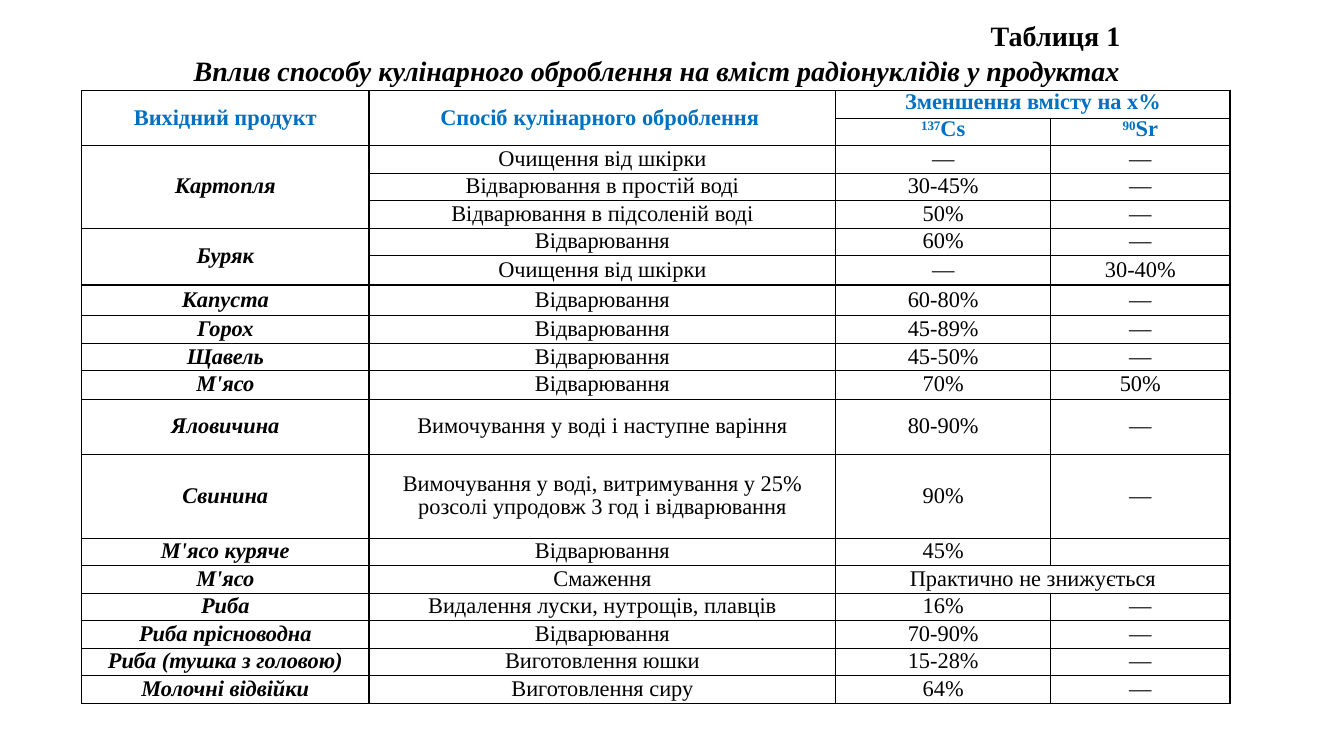
"""Build a slide with a table of radionuclide loss by cooking method."""
from dataclasses import dataclass

from lxml.etree import SubElement
from pptx import Presentation
from pptx.dml.color import RGBColor
from pptx.enum.text import MSO_ANCHOR as Anchor, PP_ALIGN as Align
from pptx.oxml import parse_xml
from pptx.oxml.ns import nsdecls, qn
from pptx.util import Inches, Pt

BLACK = RGBColor(0x00, 0x00, 0x00)
BLUE = RGBColor(0x00, 0x70, 0xC0)
FONT = "Times New Roman"
CELL_SIZE = 16
TABLE_HEIGHT = 6.08
HEADER_ROWS = 2
COLUMN_WIDTHS = (2.85, 4.63, 2.13, 1.78)
DASH = "—"
BOILING = "Відварювання"
PEELING = "Очищення від шкірки"


@dataclass(frozen=True)
class Treatment:
    """One cooking method with its reductions and any special row height."""
    method: str
    caesium: str
    strontium: str | None = DASH
    height: float | None = None


@dataclass(frozen=True)
class Product:
    """A product with the treatments applied to it."""
    name: str
    treatments: tuple[Treatment, ...]


PRODUCTS = (
    Product("Картопля", (
        Treatment(PEELING, DASH),
        Treatment("Відварювання в простій воді", "30-45%"),
        Treatment("Відварювання в підсоленій воді", "50%"),
    )),
    Product("Буряк", (
        Treatment(BOILING, "60%"),
        Treatment(PEELING, DASH, "30-40%", height=0.29),
    )),
    Product("Капуста", (Treatment(BOILING, "60-80%", height=0.3),)),
    Product("Горох", (Treatment(BOILING, "45-89%", height=0.28),)),
    Product("Щавель", (Treatment(BOILING, "45-50%"),)),
    Product("М'ясо", (Treatment(BOILING, "70%", "50%", height=0.28),)),
    Product("Яловичина", (
        Treatment("Вимочування у воді і наступне варіння", "80-90%", height=0.55),
    )),
    Product("Свинина", (
        Treatment("Вимочування у воді, витримування у 25% розсолі упродовж 3 год "
                  "і відварювання", "90%", height=0.83),
    )),
    Product("М'ясо куряче", (Treatment(BOILING, "45%", ""),)),
    Product("М'ясо", (Treatment("Смаження", "Практично не знижується", None),)),
    Product("Риба", (Treatment("Видалення луски, нутрощів, плавців", "16%"),)),
    Product("Риба прісноводна", (Treatment(BOILING, "70-90%"),)),
    Product("Риба (тушка з головою)", (Treatment("Виготовлення юшки", "15-28%"),)),
    Product("Молочні відвійки", (Treatment("Виготовлення сиру", "64%"),)),
)


def write(paragraph, text: str, *, size: int = CELL_SIZE, color: RGBColor = BLACK,
          bold: bool = False, italic: bool = False, raised: bool = False,
          align: Align = Align.CENTER, spacing: float = 0.93) -> None:
    """Add formatted text to a paragraph."""
    paragraph.alignment = align
    paragraph.line_spacing = spacing
    if not text:
        SubElement(paragraph._p, qn("a:endParaRPr"), sz=str(size * 100))
        return
    run = paragraph.add_run()
    run.text = text
    font = run.font
    font.name, font.size, font.bold, font.italic = FONT, Pt(size), bold, italic
    font.color.rgb = color
    if raised:
        run._r.get_or_add_rPr().set("baseline", "30000")


def style_cell(cell) -> None:
    """Clear the fill, set the margins and outline a cell."""
    cell.fill.background()
    cell.margin_left = cell.margin_right = Inches(0.03)
    cell.margin_top = cell.margin_bottom = 0
    cell.vertical_anchor = Anchor.MIDDLE
    properties = cell._tc.get_or_add_tcPr()
    for position, side in enumerate("LRTB"):
        properties.insert(position, parse_xml(
            f'<a:ln{side} {nsdecls("a")} w="{Pt(1)}"><a:solidFill>'
            f'<a:srgbClr val="{BLACK}"/></a:solidFill></a:ln{side}>'))


def add_title(slide) -> None:
    """Add the table number and its caption."""
    title = slide.shapes.add_textbox(Inches(1.8), Inches(0.12), Inches(9.41), Inches(0.77))
    frame = title.text_frame
    frame.word_wrap = True
    caption = "Вплив способу кулінарного оброблення на вміст радіонуклідів у продуктах"
    look = dict(size=20, bold=True, align=Align.RIGHT, spacing=1.05)
    write(frame.paragraphs[0], "Таблиця 1", **look)
    write(frame.add_paragraph(), caption, italic=True, **look)


def fill_header(table) -> None:
    """Write the two-level heading."""
    heading = dict(color=BLUE, bold=True)
    for column, text in enumerate(("Вихідний продукт", "Спосіб кулінарного оброблення ")):
        table.cell(0, column).merge(table.cell(1, column))
        write(table.cell(0, column).text_frame.paragraphs[0], text, **heading)
    reduction = table.cell(0, 2)
    reduction.merge(table.cell(0, 3))
    reduction.vertical_anchor = Anchor.TOP
    write(reduction.text_frame.paragraphs[0], "Зменшення вмісту на х%", **heading)
    for column, (mass, element) in enumerate((("137", "Сs"), ("90", "Sr")), start=2):
        isotope = table.cell(1, column)
        isotope.vertical_anchor = Anchor.TOP
        paragraph = isotope.text_frame.paragraphs[0]
        write(paragraph, mass, raised=True, **heading)
        write(paragraph, element, **heading)


def fill_products(table) -> None:
    """Write each product beside its treatments."""
    row = HEADER_ROWS
    for product in PRODUCTS:
        name = table.cell(row, 0)
        if len(product.treatments) > 1:
            name.merge(table.cell(row + len(product.treatments) - 1, 0))
        write(name.text_frame.paragraphs[0], product.name, bold=True, italic=True)
        for treatment in product.treatments:
            values = (treatment.method, treatment.caesium, treatment.strontium)
            for column, value in enumerate(values, start=1):
                if value is None:
                    table.cell(row, column - 1).merge(table.cell(row, column))
                else:
                    write(table.cell(row, column).text_frame.paragraphs[0], value)
            row += 1


def add_reduction_table(slide) -> None:
    """Add the table and share the spare height among the regular rows."""
    heights = [None] * HEADER_ROWS + [
        treatment.height for product in PRODUCTS for treatment in product.treatments]
    special = sum(height for height in heights if height)
    regular = (TABLE_HEIGHT - special) / heights.count(None)
    table = slide.shapes.add_table(
        len(heights), len(COLUMN_WIDTHS), Inches(0.81), Inches(0.9),
        Inches(sum(COLUMN_WIDTHS)), Inches(TABLE_HEIGHT)).table
    table.first_row = table.horz_banding = False
    for column, width in zip(table.columns, COLUMN_WIDTHS):
        column.width = Inches(width)
    for row, height in zip(table.rows, heights):
        row.height = Inches(height or regular)
    for cell in table.iter_cells():
        style_cell(cell)
    fill_header(table)
    fill_products(table)


def main() -> None:
    """Create and save the presentation."""
    presentation = Presentation()
    presentation.slide_width, presentation.slide_height = Inches(13.33), Inches(7.5)
    slide = presentation.slides.add_slide(presentation.slide_layouts[6])
    add_title(slide)
    add_reduction_table(slide)
    presentation.save("out.pptx")


if __name__ == "__main__":
    main()
